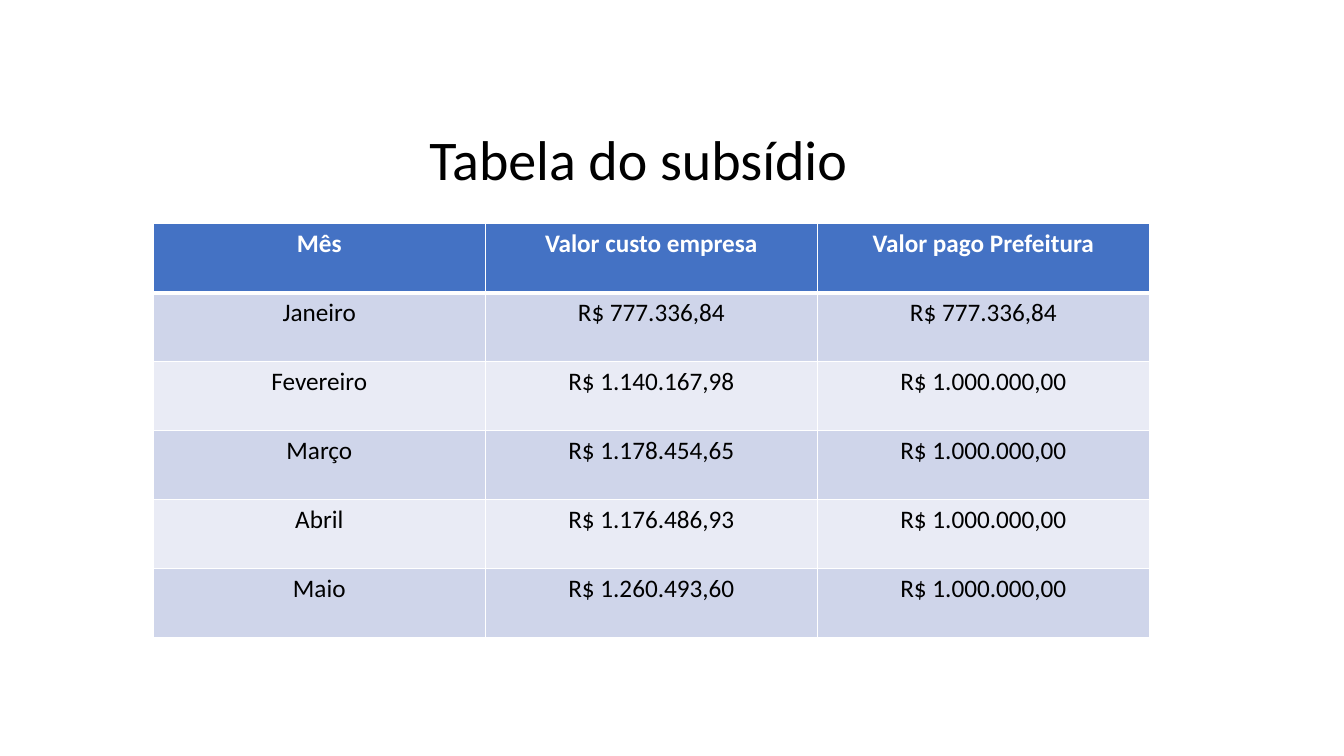
from dataclasses import dataclass

from lxml import etree
from pptx import Presentation
from pptx.dml.color import RGBColor
from pptx.enum.text import PP_ALIGN
from pptx.oxml.ns import qn
from pptx.slide import Slide
from pptx.table import _Cell
from pptx.text.text import TextFrame
from pptx.util import Emu, Pt

CENTER = PP_ALIGN.CENTER
EMU_PER_PX = 9144
EMU_PER_POINT = 12700
FONT_NAME = "Calibri"
BLACK = RGBColor(0x00, 0x00, 0x00)
WHITE = RGBColor(0xFF, 0xFF, 0xFF)
HEADER_BLUE = RGBColor(0x44, 0x72, 0xC4)
BAND_DARK = RGBColor(0xCF, 0xD5, 0xEA)
BAND_LIGHT = RGBColor(0xE9, 0xEB, 0xF5)


@dataclass(frozen=True)
class Box:
    """A rectangle on the slide in px."""

    left: int
    top: int
    width: int
    height: int

    def to_emu(self) -> tuple[Emu, Emu, Emu, Emu]:
        """Return the rectangle's lengths in EMU."""
        return px(self.left), px(self.top), px(self.width), px(self.height)


@dataclass(frozen=True)
class Subsidy:
    """One month of company cost and city payment."""

    month: str
    cost: str
    paid: str


TITLE_BOX = Box(383, 119, 500, 78)
TABLE_BOX = Box(152, 222, 988, 411)
HEADER = Subsidy("Mês", "Valor custo empresa", "Valor pago Prefeitura")
SUBSIDIES = [
    Subsidy("Janeiro", "R$ 777.336,84", "R$ 777.336,84"),
    Subsidy("Fevereiro", "R$ 1.140.167,98", "R$ 1.000.000,00"),
    Subsidy("Março", "R$ 1.178.454,65", "R$ 1.000.000,00"),
    Subsidy("Abril", "R$ 1.176.486,93", "R$ 1.000.000,00"),
    Subsidy("Maio", "R$ 1.260.493,60", "R$ 1.000.000,00"),
]


def px(length: int) -> Emu:
    """Convert px to EMU."""
    return Emu(length * EMU_PER_PX)


def write_text(
    frame: TextFrame, text: str, *, size: int, color: RGBColor = BLACK, bold: bool = False
) -> None:
    """Write one centred, formatted paragraph."""
    paragraph = frame.paragraphs[0]
    paragraph.alignment = CENTER
    run = paragraph.add_run()
    run.text = text
    run.font.name = FONT_NAME
    run.font.size = Pt(size)
    run.font.bold = bold
    run.font.color.rgb = color


def set_borders(cell: _Cell, *, top: int, bottom: int) -> None:
    """Give a cell white borders, with top and bottom widths in points."""
    properties = cell._tc.get_or_add_tcPr()
    for side, width in {"L": 1, "R": 1, "T": top, "B": bottom}.items():
        line = etree.SubElement(properties, qn(f"a:ln{side}"), w=str(width * EMU_PER_POINT))
        fill = etree.SubElement(line, qn("a:solidFill"))
        etree.SubElement(fill, qn("a:srgbClr"), val=str(WHITE))


def add_title(slide: Slide) -> None:
    """Add the heading above the table."""
    frame = slide.shapes.add_textbox(*TITLE_BOX.to_emu()).text_frame
    frame.word_wrap = True
    write_text(frame, "Tabela do subsídio", size=40)


def add_subsidy_table(slide: Slide) -> None:
    """Add the header and the banded month rows."""
    rows = [HEADER, *SUBSIDIES]
    table = slide.shapes.add_table(len(rows), 3, *TABLE_BOX.to_emu()).table
    for row_index, row in enumerate(rows):
        is_header = row_index == 0
        band = BAND_DARK if row_index % 2 else BAND_LIGHT
        for column_index, text in enumerate((row.month, row.cost, row.paid)):
            cell = table.cell(row_index, column_index)
            set_borders(cell, top=3 if row_index == 1 else 1, bottom=3 if is_header else 1)
            cell.fill.solid()
            cell.fill.fore_color.rgb = HEADER_BLUE if is_header else band
            color = WHITE if is_header else BLACK
            write_text(cell.text_frame, text, size=18, color=color, bold=is_header)


def main() -> None:
    """Build and save the subsidy slide."""
    presentation = Presentation()
    presentation.slide_width = px(1333)
    presentation.slide_height = px(750)
    slide = presentation.slides.add_slide(presentation.slide_layouts[6])
    add_title(slide)
    add_subsidy_table(slide)
    presentation.save("out.pptx")


if __name__ == "__main__":
    main()
